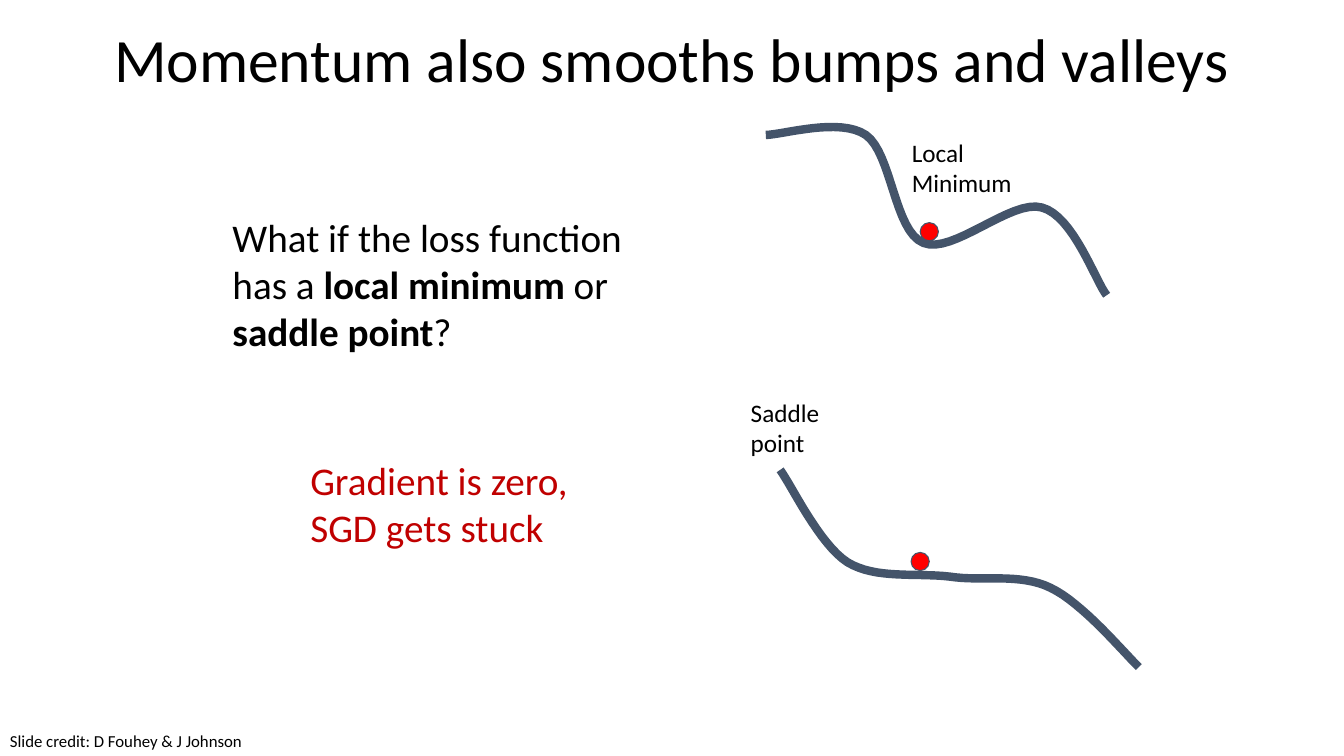
from dataclasses import dataclass
from math import cos, radians, sin

from pptx import Presentation
from pptx.dml.color import RGBColor
from pptx.enum.shapes import MSO_SHAPE
from pptx.enum.text import MSO_ANCHOR, MSO_AUTO_SIZE, PP_ALIGN
from pptx.util import Cm, Pt

COLORS = {"ink": "000000", "slate": "44546A", "ball": "FF0000", "alert": "C00000"}
FONT = "Calibri"
STEPS = 16  # straight pieces per curve segment

Point = tuple[float, float]


@dataclass
class Curve:
    points: list[Point]  # start, then two handles and an end per segment
    center: Point
    turn: float = 0


@dataclass
class Label:
    box: tuple[float, float, float, float]
    runs: list[tuple[str, bool]]
    size: int
    color: str = "ink"
    inset: float = 0.13
    wrap: bool = True
    grow: bool = False


CURVES = [
    Curve([(19.3, 3.4), (19.71, 3.4), (21.16, 2.95), (21.82, 3.4),
           (22.48, 3.86), (22.53, 5.82), (23.27, 6.12),
           (24, 6.43), (25.5, 5), (26.26, 5.23),
           (27.05, 5.44), (27.61, 7.09), (27.89, 7.44)], (23.6, 5.32)),
    Curve([(19.66, 11.84), (19.94, 12.22), (20.65, 13.72), (21.36, 14.17),
           (22.07, 14.6), (23.06, 14.43), (23.93, 14.53),
           (24.77, 14.66), (25.68, 14.43), (26.47, 14.81),
           (27.28, 15.19), (28.35, 16.48), (28.7, 16.81)], (24.18, 14.31), 4.5),
]
BALLS: list[Point] = [(23.19, 5.61), (22.96, 13.92)]
LABELS = [
    Label((5.61, 5.13, 10.82, 3.89),
          [("What if the loss function has a ", False), ("local minimum ", True),
           ("or ", False), ("saddle point", True), ("?", False)], 28, inset=0.25),
    Label((22.73, 3.33, 3.07, 1.8), [("Local Minimum", False)], 18, grow=True),
    Label((18.67, 9.88, 2.24, 1.8), [("Saddle point", False)], 18, grow=True),
    Label((7.57, 11.25, 7.72, 2.87), [("Gradient is zero, SGD gets stuck", False)],
          28, "alert", inset=0.25),
    Label((0, 18.29, 6.43, 0.76), [("Slide credit: D Fouhey & J Johnson", False)],
          12, wrap=False, grow=True),
]


def paint(name: str) -> RGBColor:
    return RGBColor.from_string(COLORS[name])


def write(para, text: str, *, size: int, color: str = "ink", bold: bool = False) -> None:
    run = para.add_run()
    run.text = text
    run.font.name = FONT
    run.font.size = Pt(size)
    run.font.bold = bold
    run.font.color.rgb = paint(color)


def outline(shape, width: float) -> None:
    shape.shadow.inherit = False
    shape.line.color.rgb = paint("slate")
    shape.line.width = Pt(width)


def spin(point: Point, center: Point, angle: float) -> Point:
    x, y = point[0] - center[0], point[1] - center[1]
    c, s = cos(radians(angle)), sin(radians(angle))
    return center[0] + x * c - y * s, center[1] + x * s + y * c


def trace(points: list[Point]) -> list[Point]:
    """Sample a chain of cubic Bezier segments."""
    path = [points[0]]
    for i in range(0, len(points) - 1, 3):
        for step in range(1, STEPS + 1):
            t = step / STEPS
            u = 1 - t
            mix = (u**3, 3 * u * u * t, 3 * u * t * t, t**3)
            path.append((sum(m * p[0] for m, p in zip(mix, points[i:i + 4])),
                         sum(m * p[1] for m, p in zip(mix, points[i:i + 4]))))
    return path


def add_curve(slide, curve: Curve) -> None:
    level = [spin(p, curve.center, -curve.turn) for p in trace(curve.points)]
    path = [(Cm(x), Cm(y)) for x, y in level]
    pen = slide.shapes.build_freeform(*path[0])
    pen.add_line_segments(path[1:], close=False)
    shape = pen.convert_to_shape()
    shape.rotation = curve.turn
    shape.fill.background()
    outline(shape, 6)


def add_ball(slide, spot: Point) -> None:
    ball = slide.shapes.add_shape(MSO_SHAPE.OVAL, Cm(spot[0]), Cm(spot[1]), Cm(0.46), Cm(0.46))
    ball.fill.solid()
    ball.fill.fore_color.rgb = paint("ball")
    outline(ball, 0.75)


def add_label(slide, label: Label) -> None:
    frame = slide.shapes.add_textbox(*map(Cm, label.box)).text_frame
    frame.word_wrap = label.wrap
    frame.auto_size = MSO_AUTO_SIZE.SHAPE_TO_FIT_TEXT if label.grow else MSO_AUTO_SIZE.NONE
    frame.margin_top = frame.margin_bottom = Cm(label.inset)
    frame.margin_left = frame.margin_right = Cm(0.25)
    for text, bold in label.runs:
        write(frame.paragraphs[0], text, size=label.size, color=label.color, bold=bold)


def add_title(slide, text: str) -> None:
    title = slide.shapes.title
    title.left, title.top, title.width, title.height = Cm(0), Cm(0), Cm(33.87), Cm(3.15)
    frame = title.text_frame
    frame.auto_size = MSO_AUTO_SIZE.NONE
    frame.vertical_anchor = MSO_ANCHOR.MIDDLE
    para = frame.paragraphs[0]
    para.alignment = PP_ALIGN.CENTER
    para.line_spacing = 0.9
    write(para, text, size=44)


def main() -> None:
    deck = Presentation()
    deck.slide_width, deck.slide_height = Cm(33.87), Cm(19.05)
    slide = deck.slides.add_slide(deck.slide_layouts[5])

    add_title(slide, "Momentum also smooths bumps and valleys")
    # Loss curves, with a ball resting on each
    for curve in CURVES:
        add_curve(slide, curve)
    for spot in BALLS:
        add_ball(slide, spot)
    # Question, answer, curve names and credit
    for label in LABELS:
        add_label(slide, label)

    deck.save("out.pptx")


if __name__ == "__main__":
    main()
